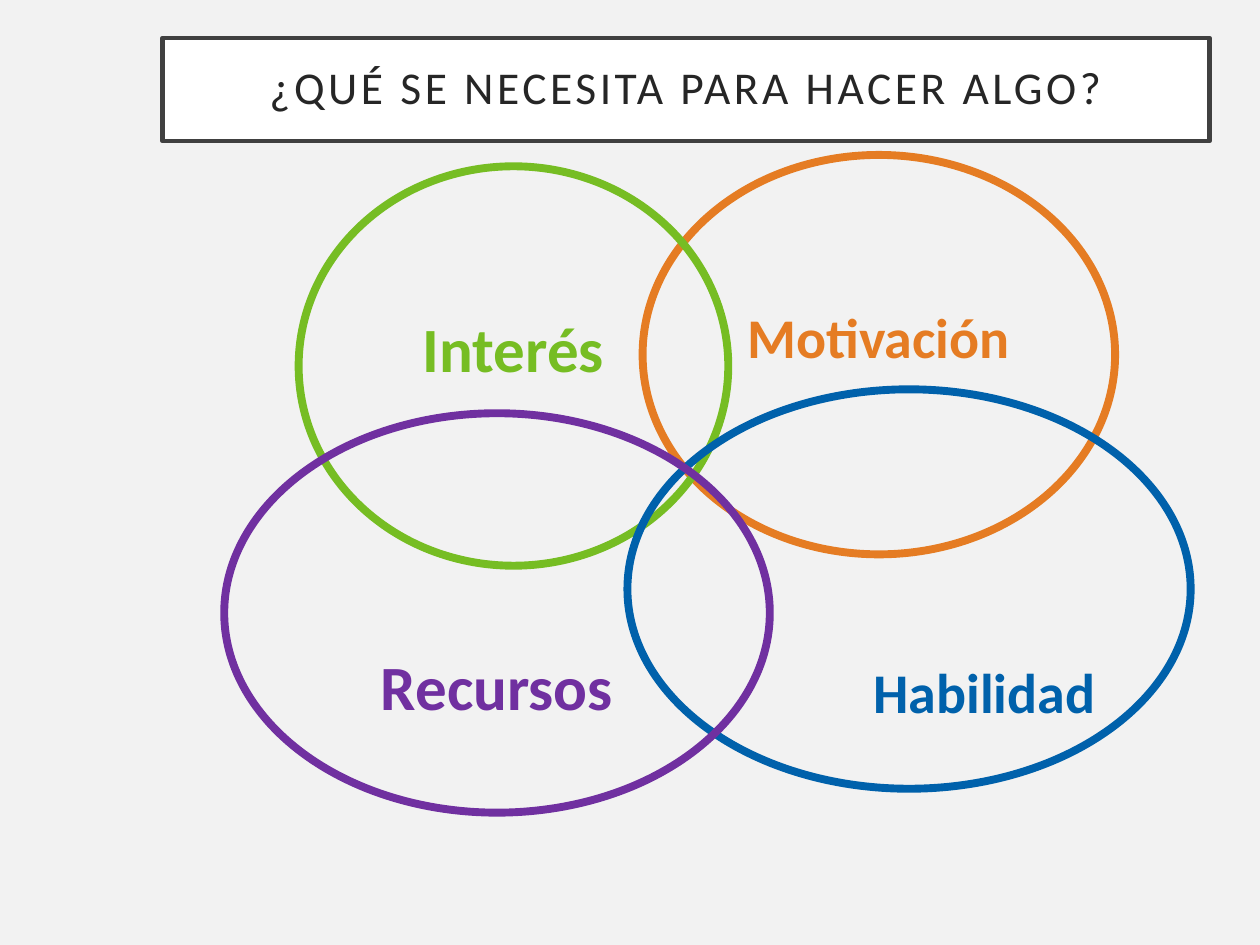
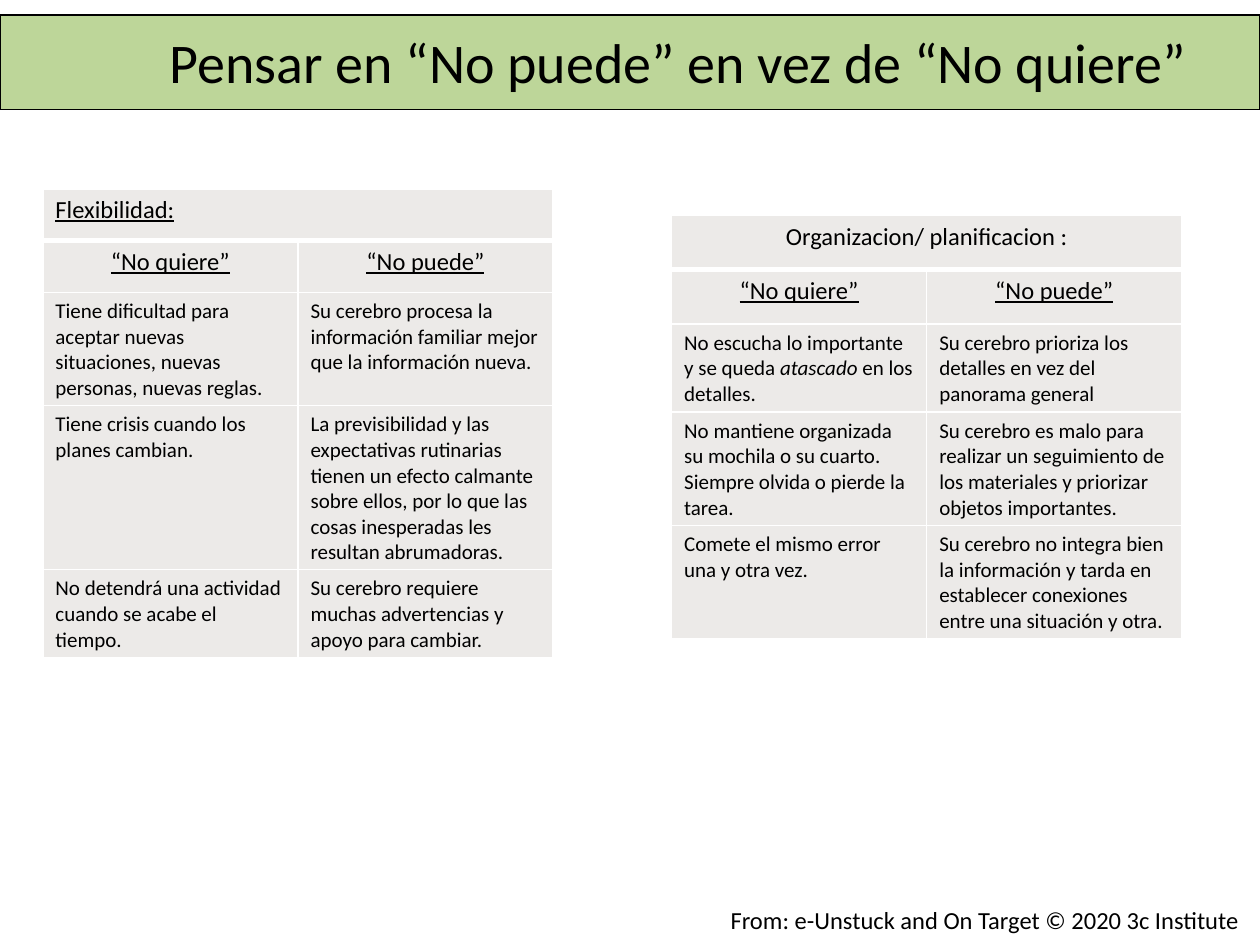
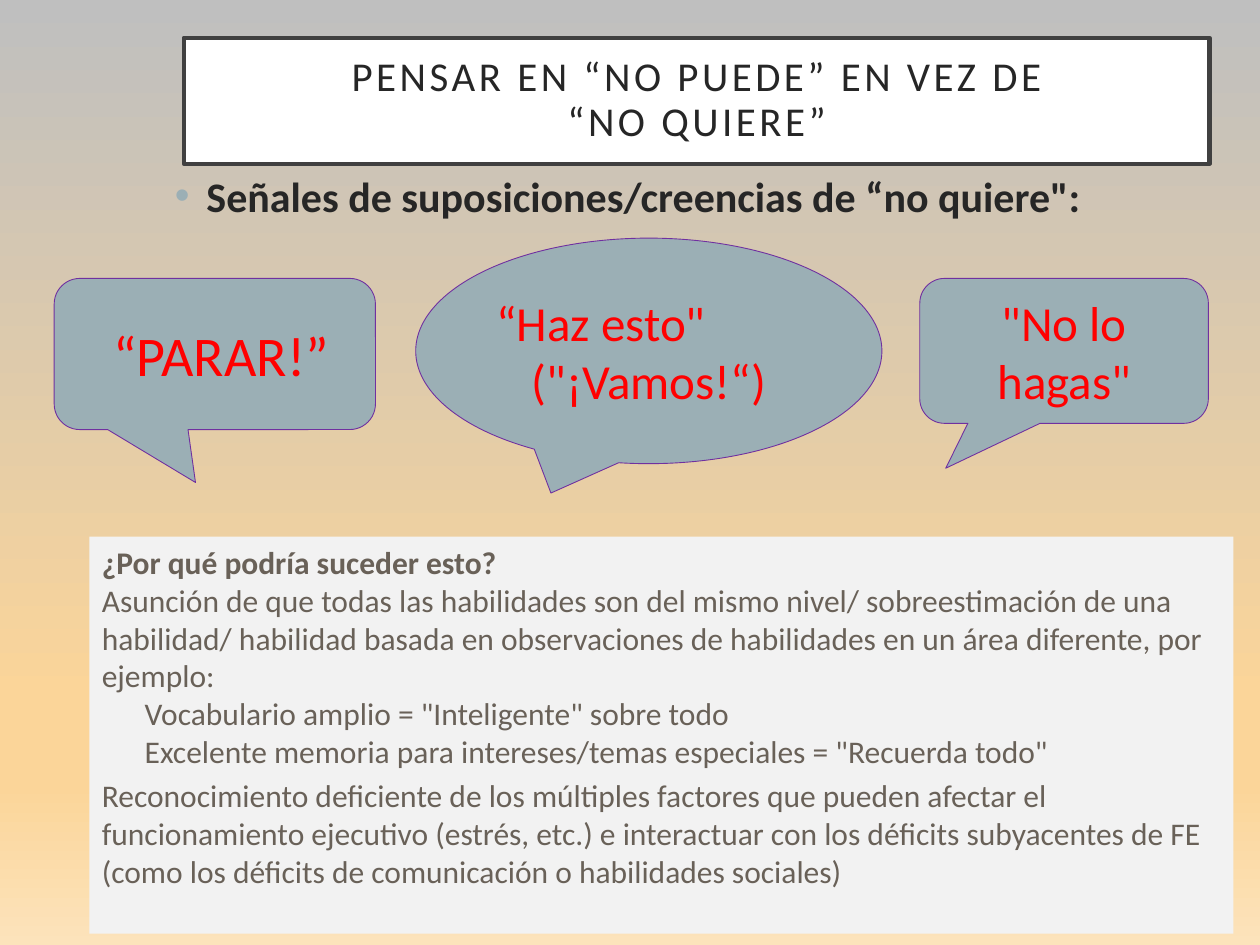
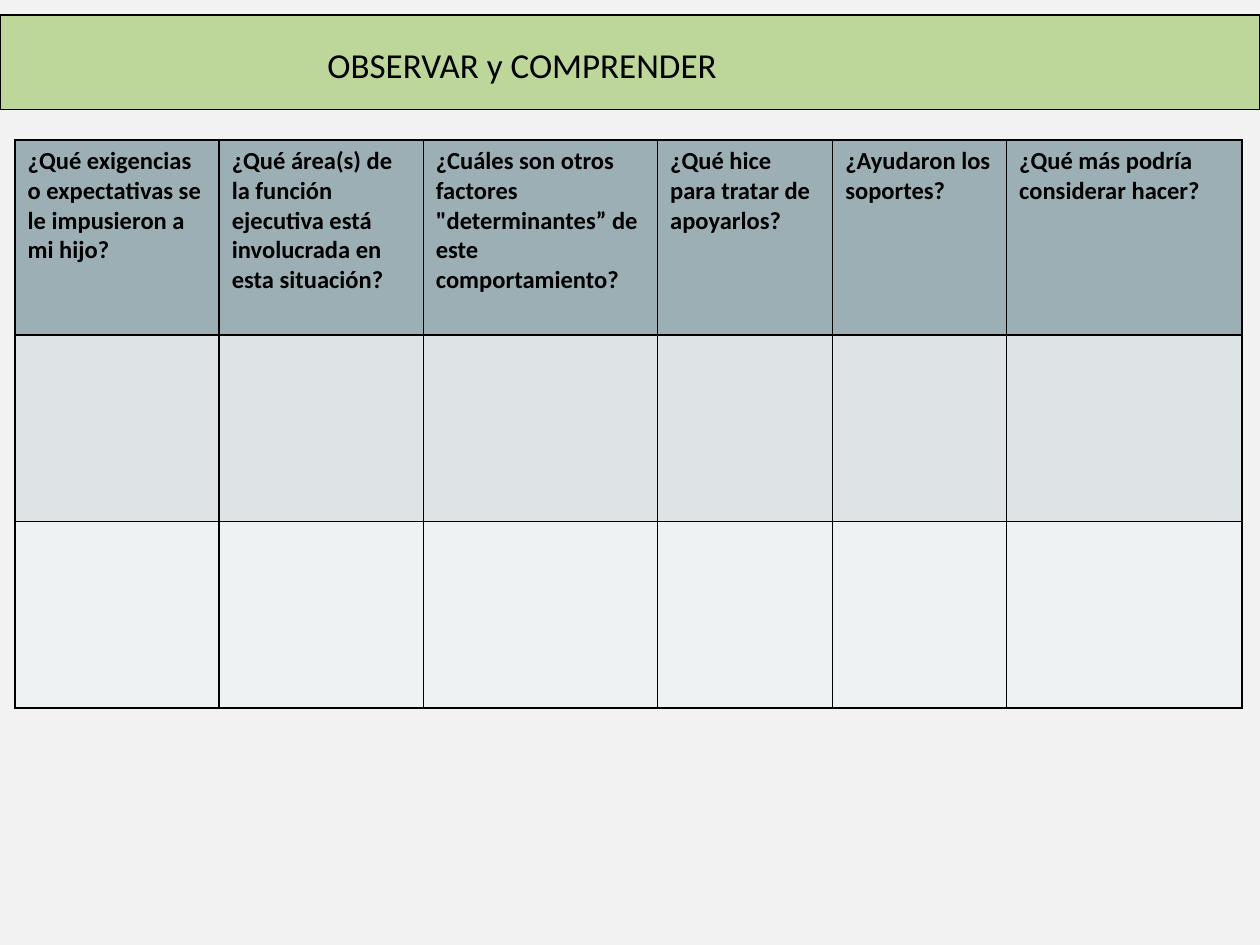
from lxml import etree
from pptx import Presentation
from pptx.dml.color import RGBColor
from pptx.enum.shapes import MSO_SHAPE
from pptx.enum.text import MSO_ANCHOR, PP_ALIGN
from pptx.oxml.ns import qn
from pptx.util import Inches, Pt

RECT, OVAL = MSO_SHAPE.RECTANGLE, MSO_SHAPE.OVAL
TALK, CLOUD = MSO_SHAPE.ROUNDED_RECTANGULAR_CALLOUT, MSO_SHAPE.OVAL_CALLOUT
LEFT, MID, RIGHT = PP_ALIGN.LEFT, PP_ALIGN.CENTER, PP_ALIGN.RIGHT
TOP, CENTER = MSO_ANCHOR.TOP, MSO_ANCHOR.MIDDLE

FONT = "Calibri"
COLS, ROWS = 100, 75  # grid over a 10 x 7.5 inch slide
INSET = (1, 0.5, 1, 0.5)
HUES = {
    "paper": "F2F2F2", "white": "FFFFFF", "black": "000000", "ink": "262626",
    "frame": "404040", "orange": "E57C23", "green": "76BD23", "blue": "0061AB",
    "purple": "7030A0", "band": "BDD699", "cell": "ECEAE8", "steel": "9BAFB5",
    "mist": "DEE3E5", "pale": "EFF2F3", "red": "FF0000", "brown": "696158",
    "grey": "BFBFBF", "sand": "FBD599", "cream": "FCE3BB",
}


def hue(name):
    return RGBColor.from_string(HUES[name])


class Deck:
    def __init__(self):
        self.show = Presentation()
        self.show.slide_width, self.show.slide_height = Inches(10), Inches(7.5)
        self.slide = None

    def col(self, n):
        return int(self.show.slide_width * n / COLS)

    def row(self, n):
        return int(self.show.slide_height * n / ROWS)

    def place(self, box):
        x, y, w, h = box
        return self.col(x), self.row(y), self.col(w), self.row(h)

    def page(self, back):
        """Start a slide; back is a colour name or a list of (percent, name)."""
        self.slide = self.show.slides.add_slide(self.show.slide_layouts[6])
        fill = self.slide.background.fill
        if isinstance(back, str):
            fill.solid()
            fill.fore_color.rgb = hue(back)
            return
        fill.gradient()
        fill.gradient_angle = 270
        stops = next(self.slide.element.iter(qn("a:gsLst")))
        for old in list(stops):
            stops.remove(old)
        for share, name in back:
            stop = etree.SubElement(stops, qn("a:gs"), pos=str(share * 1000))
            etree.SubElement(stop, qn("a:srgbClr"), val=HUES[name])

    def put(self, frame, lines, size, color="black", align=LEFT, bold=False,
            under=False, track=0, lead=None):
        """Fill a frame, one paragraph a line; *stars* mark italics."""
        for i, line in enumerate(lines):
            para = frame.paragraphs[0] if i == 0 else frame.add_paragraph()
            para.alignment = align
            if lead:
                para.line_spacing = lead
            font = para.font
            font.name, font.size, font.bold = FONT, Pt(size), bold
            font.underline = under
            font.color.rgb = hue(color)
            for j, part in enumerate(line.split("*")):
                run = para.add_run()
                run.text = part
                if j % 2:
                    run.font.italic = True
                if track:
                    run._r.get_or_add_rPr().set("spc", str(track * 100))

    def setup(self, frame, anchor, inset):
        frame.word_wrap = True
        frame.vertical_anchor = anchor
        left, top, right, low = inset
        frame.margin_left, frame.margin_right = self.col(left), self.col(right)
        frame.margin_top, frame.margin_bottom = self.row(top), self.row(low)

    def shape(self, kind, box, fill=None, edge=None, width=1, bends=(),
              anchor=CENTER, inset=INSET):
        form = self.slide.shapes.add_shape(kind, *self.place(box))
        form.shadow.inherit = False
        for i, bend in enumerate(bends):
            form.adjustments[i] = bend
        if fill:
            form.fill.solid()
            form.fill.fore_color.rgb = hue(fill)
        else:
            form.fill.background()
        if edge:
            form.line.color.rgb = hue(edge)
            form.line.width = Pt(width)
        else:
            form.line.fill.background()
        self.setup(form.text_frame, anchor, inset)
        return form.text_frame

    def text(self, box, lines, size, **style):
        frame = self.slide.shapes.add_textbox(*self.place(box)).text_frame
        self.setup(frame, TOP, INSET)
        self.put(frame, lines, size, **style)
        return frame

    def title(self, box, lines, size):
        frame = self.shape(RECT, box, "white", "frame", 2.5, inset=(2,) * 4)
        self.put(frame, lines, size, "ink", MID, track=2, lead=0.9)

    def band(self, box, line, size):
        self.shape(RECT, (0, 1.2, COLS, 7.5), "band", "black", 0.75)
        self.text(box, [line], size)

    def ring(self, box, word, size, color, shift, align=MID):
        """Oval with its word moved down by shift rows from the middle."""
        inset = (1, 0.5 + 2 * max(shift, 0), 1, 0.5 + 2 * max(-shift, 0))
        frame = self.shape(OVAL, box, edge=color, width=4.5, inset=inset)
        self.put(frame, [word], size, color, align, bold=True)

    def table(self, x, y, cols, rows):
        box = self.place((x, y, sum(cols), sum(rows)))
        grid = self.slide.shapes.add_table(len(rows), len(cols), *box).table
        grid.first_row = grid.horz_banding = False
        for part, n in zip(grid.columns, cols):
            part.width = self.col(n)
        for part, n in zip(grid.rows, rows):
            part.height = self.row(n)
        return grid

    def cell(self, cell, fill, edge, top=1, low=1):
        props = cell._tc.get_or_add_tcPr()
        for side, width in zip("LRTB", (1, 1, top, low)):
            line = etree.SubElement(props, qn("a:ln" + side), w=str(Pt(width)))
            paint = etree.SubElement(line, qn("a:solidFill"))
            etree.SubElement(paint, qn("a:srgbClr"), val=HUES[edge])
        cell.fill.solid()
        cell.fill.fore_color.rgb = hue(fill)

    def pairs(self, x, y, rows, head, look, body):
        """Two-column table under one merged heading."""
        grid = self.table(x, y, (20.25, 20.25), rows)
        grid.cell(0, 0).merge(grid.cell(0, 1))
        lines = [(head,), ("“No quiere”", "“No puede”"), *body]
        for r, words in enumerate(lines):
            for c in range(2):
                self.cell(grid.cell(r, c), "cell", "white",
                          3 if r == 1 else 1, 3 if r == 0 else 1)
            for c, word in enumerate(words):
                style = (look, {"size": 14, "align": MID, "under": True},
                         {"size": 12})[min(r, 2)]
                self.put(grid.cell(r, c).text_frame, [word], **style)


def needs(deck):
    deck.page("paper")
    deck.title((12.9, 3, 83.1, 8.2), ["¿QUÉ SE NECESITA PARA HACER ALGO?"], 26)
    deck.ring((51, 12.3, 37.5, 31.7), "Motivación", 32, "orange", -1.5)
    deck.ring((23.7, 13.2, 34.1, 31.7), "Interés", 36, "green", -1.5)
    deck.ring((49.8, 30.9, 44.7, 31.7), "Habilidad", 32, "blue", 8.1, RIGHT)
    deck.ring((17.8, 32.8, 43.3, 31.7), "Recursos", 36, "purple", 5.75)


def think(deck):
    deck.page("white")
    deck.text((57, 71.3, 43, 3.4),
              ["From: e-Unstuck and On Target © 2020 3c Institute"], 14)
    deck.pairs(3.4, 15, (4.1, 4.1, 9, 13, 6.9), "Flexibilidad:",
               {"size": 14, "under": True}, [
        ("Tiene dificultad para aceptar nuevas situaciones, nuevas personas, "
         "nuevas reglas.",
         "Su cerebro procesa la información familiar mejor que la información "
         "nueva."),
        ("Tiene crisis cuando los planes cambian.",
         "La previsibilidad y las expectativas rutinarias tienen un efecto "
         "calmante sobre ellos, por lo que las cosas inesperadas les resultan "
         "abrumadoras."),
        ("No detendrá una actividad cuando se acabe el tiempo.",
         "Su cerebro requiere muchas advertencias y apoyo para cambiar."),
    ])
    deck.pairs(53.3, 17.1, (4.3, 4.3, 7, 9, 9), "Organizacion/ planificacion :",
               {"size": 14, "align": MID}, [
        ("No escucha lo importante y se queda *atascado* en los detalles.",
         "Su cerebro prioriza los detalles en vez del panorama general"),
        ("No mantiene organizada su mochila o su cuarto. Siempre olvida o "
         "pierde la tarea.",
         "Su cerebro es malo para realizar un seguimiento de los materiales y "
         "priorizar objetos importantes."),
        ("Comete el mismo error una y otra vez.",
         "Su cerebro no integra bien la información y tarda en establecer "
         "conexiones entre una situación y otra."),
    ])
    deck.band((12.5, 1.7, 83.3, 6.4),
              "Pensar en “No puede” en vez de “No quiere”", 32)


def signs(deck):
    deck.page([(0, "grey"), (74, "sand"), (83, "sand"), (100, "cream")])
    deck.title((14.6, 3, 81.4, 10),
               ["PENSAR EN “NO PUEDE” EN VEZ DE", "“NO QUIERE”"], 23.4)

    # Bulleted lead line
    frame = deck.text((12.9, 13, 83.1, 7.1), [], 24)
    props = frame.paragraphs[0]._p.get_or_add_pPr()
    props.set("marL", str(deck.col(2.5)))
    props.set("indent", str(-deck.col(2.5)))
    tint = etree.SubElement(props, qn("a:buClr"))
    etree.SubElement(tint, qn("a:srgbClr"), val=HUES["steel"])
    etree.SubElement(props, qn("a:buFont"), typeface="Arial")
    etree.SubElement(props, qn("a:buChar"), char="•")
    deck.put(frame, ["Señales de suposiciones/creencias de “no quiere\":"],
             24, "ink", bold=True)

    # Reasons
    frame = deck.shape(RECT, (7.1, 42.6, 90.8, 31.5), "paper", anchor=TOP)
    deck.put(frame, [
        "¿Por qué podría suceder esto?",
        "Asunción de que todas las habilidades son del mismo nivel/ "
        "sobreestimación de una habilidad/ habilidad basada en observaciones "
        "de habilidades en un área diferente, por ejemplo:",
        "Vocabulario amplio = \"Inteligente\" sobre todo",
        "Excelente memoria para intereses/temas especiales = \"Recuerda todo\"",
        "Reconocimiento deficiente de los múltiples factores que pueden "
        "afectar el funcionamiento ejecutivo (estrés, etc.) e interactuar con "
        "los déficits subyacentes de FE (como los déficits de comunicación o "
        "habilidades sociales)",
    ], 18, "brown")
    paras = frame.paragraphs
    paras[0].font.bold = True
    for para in paras[2:4]:
        para._p.get_or_add_pPr().set("marL", str(deck.col(3.4)))
    paras[4].space_before = Pt(3.6)

    # Speech balloons
    for kind, box, bends, pad, lines, size in (
        (TALK, (73, 22.1, 22.9, 11.5), (-0.41, 0.81, 0.17), 1,
         ["\"No lo hagas\""], 28),
        (CLOUD, (33, 18.9, 37, 17.9), (-0.21, 0.63), 1,
         ["“Haz esto\"", "(\"¡Vamos!“)"], 28),
        (TALK, (4.3, 22.1, 25.5, 12), (-0.06, 0.85, 0.17), 2,
         ["“PARAR!”"], 32),
    ):
        frame = deck.shape(kind, box, "steel", "purple", 0.5, bends,
                           inset=(pad, 0.5, 1, 0.5))
        deck.put(frame, lines, size, "red", MID)
        if kind == CLOUD:
            frame.paragraphs[0].alignment = LEFT


def watch(deck):
    deck.page("paper")
    heads = (
        "¿Qué exigencias o expectativas se le impusieron a mi hijo?",
        "¿Qué área(s) de la función ejecutiva está involucrada en esta "
        "situación?",
        "¿Cuáles son otros factores \"determinantes” de este comportamiento?",
        "¿Qué hice para tratar de apoyarlos?",
        "¿Ayudaron los soportes?",
        "¿Qué más podría considerar hacer?",
    )
    grid = deck.table(1.2, 11.1, (16.2, 16.2, 18.6, 13.9, 13.8, 18.7),
                      (15.5, 14.8, 14.8))
    for r, fill in enumerate(("steel", "mist", "pale")):
        for c in range(len(heads)):
            deck.cell(grid.cell(r, c), fill, "black")
    for c, head in enumerate(heads):
        deck.put(grid.cell(0, c).text_frame, [head], 14, bold=True)
    deck.band((25, 3, 50, 4.4), "OBSERVAR y COMPRENDER", 20)


def main():
    deck = Deck()
    for build in (needs, think, signs, watch):
        build(deck)
    deck.show.save("out.pptx")


if __name__ == "__main__":
    main()
